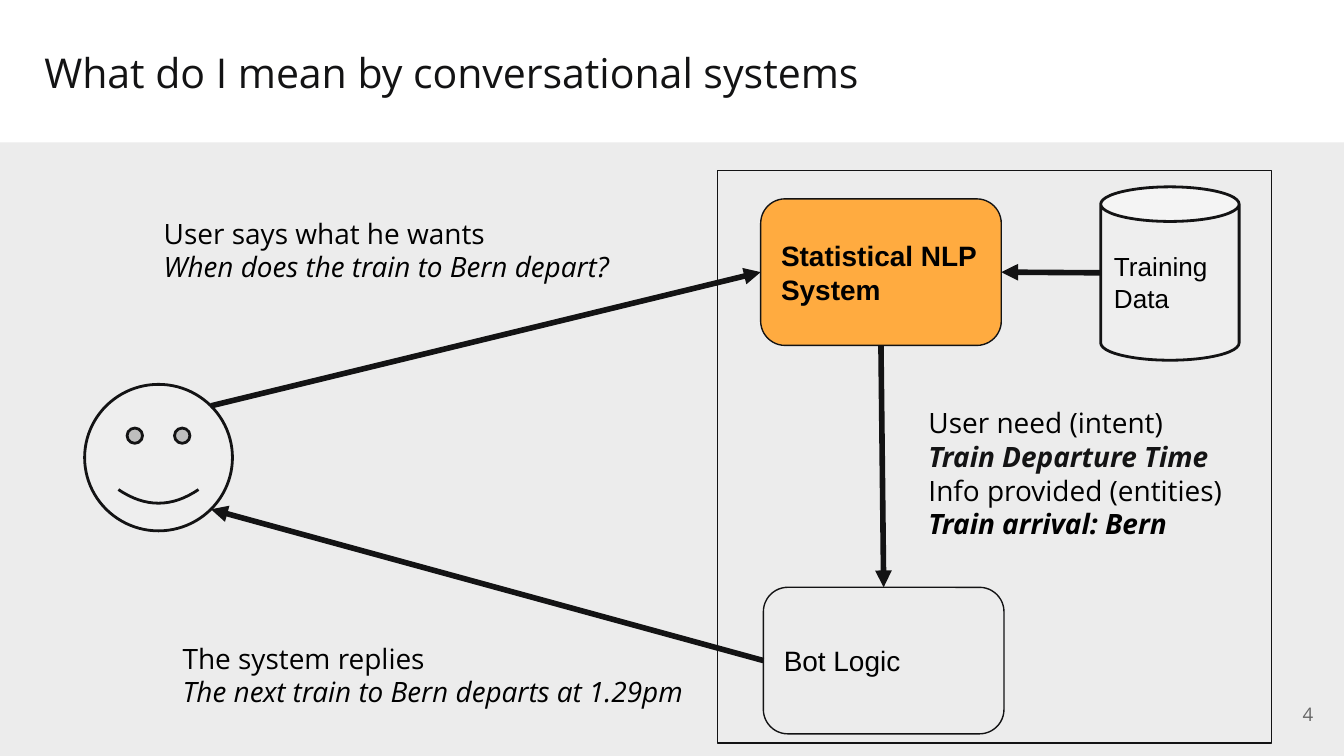
from pptx import Presentation
from pptx.dml.color import RGBColor
from pptx.enum.shapes import MSO_CONNECTOR, MSO_SHAPE
from pptx.enum.text import MSO_ANCHOR, PP_ALIGN
from pptx.oxml.ns import qn
from pptx.util import Inches, Pt
from lxml.etree import SubElement

W = 10
H = W * 9 / 16
INK, BLACK, PALE, GREY = "131314", "000000", "EEEEEE", "ECECEC"
SANS, ARIAL = "Open Sans", "Arial"

TITLE = "What do I mean by conversational systems"
PANELS = [
    ((0, 1.06, W, H - 1.06), GREY, None),
    ((5.34, 1.27, 4.12, 4.26), None, 0.75),
]
NODES = {
    "user": (MSO_SHAPE.SMILEY_FACE, (0.63, 2.86, 1.1, 1.09), PALE, 1.5, "", 15, False),
    "nlp": (MSO_SHAPE.ROUNDED_RECTANGLE, (5.66, 1.48, 1.79, 1.09), "FFAB40", 0.75,
            "Statistical NLP System", 15, True),
    "bot": (MSO_SHAPE.ROUNDED_RECTANGLE, (5.68, 4.37, 1.79, 1.09), None, 0.75,
            "Bot Logic", 15, False),
    "data": (MSO_SHAPE.CAN, (8.19, 1.39, 1.03, 1.29), PALE, 1.5,
             "Training Data", 14, False),
}
NOTES = [
    ((1.12, 1.51, 3.74, 0.71), None, [
        ("User says what he wants", BLACK, False, False),
        ("When does the train to Bern depart?", BLACK, False, True)]),
    ((1.26, 4.67, 3.99, 0.71), None, [
        ("The system replies", BLACK, False, False),
        ("The next train to Bern departs at 1.29pm", BLACK, False, True)]),
    ((6.81, 2.92, 2.45, 1.21), GREY, [
        ("User need (intent)", BLACK, False, False),
        ("Train Departure Time", INK, True, True),
        ("Info provided (entities)", BLACK, False, False),
        ("Train arrival: Bern", BLACK, True, True)]),
]
TOP, LEFT, BOTTOM, RIGHT = range(4)
ARROWS = [
    ((1.57, 3.02), ("nlp", LEFT)),
    (("nlp", BOTTOM), ("bot", TOP)),
    (("bot", LEFT), (1.57, 3.79)),
    ((8.19, 2.03), ("nlp", RIGHT)),
]


def rgb(code):
    return RGBColor.from_string(code)


def place(box):
    return [Inches(v) for v in box]


def paint(shape, fill, line=None):
    if fill:
        shape.fill.solid()
        shape.fill.fore_color.rgb = rgb(fill)
    else:
        shape.fill.background()
    if line:
        shape.line.width = Pt(line)
        shape.line.color.rgb = rgb(INK)
    else:
        shape.line.fill.background()


def write(shape, rows, size, face, anchor=MSO_ANCHOR.TOP, align=PP_ALIGN.LEFT):
    frame = shape.text_frame
    frame.word_wrap = True
    frame.vertical_anchor = anchor
    frame.margin_left = frame.margin_right = Inches(0.1)
    frame.margin_top = frame.margin_bottom = Inches(0.1)
    frame.text = "\n".join(row[0] for row in rows)
    for para, (_, color, bold, slant) in zip(frame.paragraphs, rows):
        para.alignment = align
        font = para.font
        font.name, font.size = face, Pt(size)
        font.bold, font.italic = bold, slant
        font.color.rgb = rgb(color)


def add_shape(kind, box, fill, line=None):
    shape = slide.shapes.add_shape(kind, *place(box))
    shape.shadow.inherit = False
    paint(shape, fill, line)
    return shape


def add_arrow(start, end):
    line = slide.shapes.add_connector(MSO_CONNECTOR.STRAIGHT, 0, 0, 0, 0)
    if start[0] in nodes:
        line.begin_connect(nodes[start[0]], start[1])
    else:
        line.begin_x, line.begin_y = place(start)
    if end[0] in nodes:
        line.end_connect(nodes[end[0]], end[1])
    else:
        line.end_x, line.end_y = place(end)
    line.line.width = Pt(3)
    line.line.color.rgb = rgb(INK)
    props = line._element.spPr
    SubElement(props.find(qn("a:ln")), qn("a:tailEnd"), type="triangle")
    SubElement(props, qn("a:effectLst"))


deck = Presentation()
deck.slide_width, deck.slide_height = place((W, H))
slide = deck.slides.add_slide(deck.slide_layouts[5])

for box, fill, line in PANELS:
    add_shape(MSO_SHAPE.RECTANGLE, box, fill, line)

title = slide.shapes.title
title.left, title.top, title.width, title.height = place((0.23, 0.25, 6.59, 0.63))
write(title, [(TITLE, INK, False, False)], 22, SANS)

page = slide.shapes.add_textbox(*place((9.46, 5.1, 0.41, 0.43)))
write(page, [("4", "666666", False, False)], 10, SANS, MSO_ANCHOR.MIDDLE, PP_ALIGN.RIGHT)

nodes = {}
for name, (kind, box, fill, line, text, size, bold) in NODES.items():
    nodes[name] = add_shape(kind, box, fill, line)
    if text:
        write(nodes[name], [(text, BLACK, bold, False)], size, ARIAL, MSO_ANCHOR.MIDDLE)

for start, end in ARROWS:
    add_arrow(start, end)

for box, fill, rows in NOTES:
    note = slide.shapes.add_textbox(*place(box))
    paint(note, fill)
    write(note, rows, 15, SANS)

deck.save("out.pptx")
